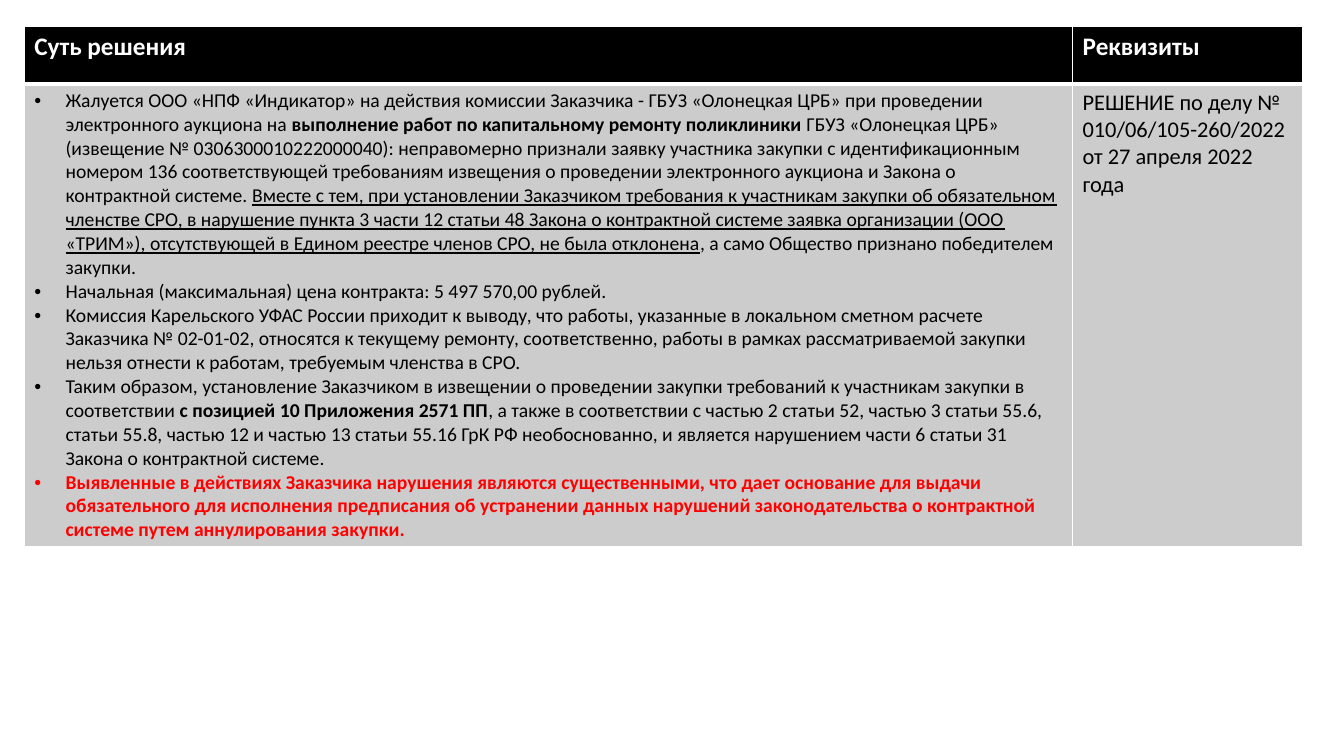
import pptx
import pptx.util
import pptx.dml.color
import pptx.oxml
import pptx.oxml.ns

FONT = "Calibri"
WHITE, BLACK, GREY, RED = "FFFFFF", "000000", "CCCCCC", "FF0000"
BODY = {"size": pptx.util.Pt(14), "bold": False, "color": BLACK}
BOLD = {**BODY, "bold": True}
UNDERLINED = {**BODY, "underline": True}
ALERT = {**BOLD, "color": RED}
HEADER = {"size": pptx.util.Pt(18), "bold": True, "color": WHITE}
DETAILS = {**BODY, "size": pptx.util.Pt(16)}

HEADINGS = ["Суть решения", "Реквизиты"]
SUMMARY = [
    [("Жалуется ООО «НПФ «Индикатор» на действия комиссии Заказчика - ГБУЗ «Олонецкая ЦРБ» "
      "при проведении электронного аукциона на ", BODY),
     ("выполнение работ по капитальному ремонту поликлиники ", BOLD),
     ("ГБУЗ «Олонецкая ЦРБ» (извещение № 0306300010222000040): неправомерно признали заявку "
      "участника закупки с идентификационным номером 136 соответствующей требованиям извещения "
      "о проведении электронного аукциона и Закона о контрактной системе. ", BODY),
     ("Вместе с тем, при установлении Заказчиком требования к участникам закупки об обязательном "
      "членстве СРО, в нарушение пункта 3 части 12 статьи 48 Закона о контрактной системе заявка "
      "организации (ООО «ТРИМ»), отсутствующей в Едином реестре членов СРО, не была отклонена",
      UNDERLINED),
     (", а само Общество признано победителем закупки.", BODY)],
    [("Начальная (максимальная) цена контракта: 5 497 570,00 рублей.", BODY)],
    [("Комиссия Карельского УФАС России приходит к выводу, что работы, указанные в локальном "
      "сметном расчете Заказчика № 02-01-02, относятся к текущему ремонту, соответственно, работы "
      "в рамках рассматриваемой закупки нельзя отнести к работам, требуемым членства в СРО.", BODY)],
    [("Таким образом, установление Заказчиком в извещении о проведении закупки требований к "
      "участникам закупки в соответствии ", BODY),
     ("с позицией 10 Приложения 2571 ПП", BOLD),
     (", а также в соответствии с частью 2 статьи 52, частью 3 статьи 55.6, статьи 55.8, частью 12 "
      "и частью 13 статьи 55.16 ГрК РФ необоснованно, и является нарушением части 6 статьи 31 "
      "Закона о контрактной системе.", BODY)],
    [("Выявленные в действиях Заказчика нарушения являются существенными, что дает основание для "
      "выдачи обязательного для исполнения предписания об устранении данных нарушений "
      "законодательства о контрактной системе путем аннулирования закупки.", ALERT)],
]
DECISION = "РЕШЕНИЕ по делу № 010/06/105-260/2022 от 27 апреля 2022 года"


def rgb(value):
    return pptx.dml.color.RGBColor.from_string(value)


def add_bullet(p):
    pPr = p._p.get_or_add_pPr()
    indent = pptx.util.Inches(0.31)
    pPr.set("marL", str(indent))
    pPr.set("indent", str(-indent))
    for tag, name, value in (("buFont", "typeface", "Arial"), ("buChar", "char", "•")):
        el = pptx.oxml.parse_xml(f'<a:{tag} {pptx.oxml.ns.nsdecls("a")} {name}="{value}"/>')
        pPr.append(el)


def set_borders(cell, widths):
    tcPr = cell._tc.get_or_add_tcPr()
    for side, width in zip("LRTB", widths):
        tcPr.append(pptx.oxml.parse_xml(
            f'<a:ln{side} {pptx.oxml.ns.nsdecls("a")} w="{pptx.util.Pt(width)}">'
            f'<a:solidFill><a:srgbClr val="{WHITE}"/></a:solidFill></a:ln{side}>'))


def fill_cell(cell, paragraphs, fill, borders, bulleted=False):
    set_borders(cell, borders)
    cell.fill.solid()
    cell.fill.fore_color.rgb = rgb(fill)
    tf = cell.text_frame
    for i, runs in enumerate(paragraphs):
        p = tf.add_paragraph() if i else tf.paragraphs[0]
        if bulleted:
            add_bullet(p)
        for text, style in runs:
            r = p.add_run()
            r.text = text
            r.font.name = FONT
            for key, value in style.items():
                if key == "color":
                    r.font.color.rgb = rgb(value)
                else:
                    setattr(r.font, key, value)


def add_decision_table(s, left, top, width, height):
    table = s.shapes.add_table(2, 2, left, top, width, height).table
    for column, share in zip(table.columns, (0.82, 0.18)):
        column.width = int(width * share)
    header_height = int(height * 0.112)
    for row, size in zip(table.rows, (header_height, height - header_height)):
        row.height = size
    for i, heading in enumerate(HEADINGS):
        fill_cell(table.cell(0, i), [[(heading, HEADER)]], BLACK, (1, 1, 1, 3))
    body_borders = (1, 1, 3, 1)
    fill_cell(table.cell(1, 0), SUMMARY, GREY, body_borders, bulleted=True)
    fill_cell(table.cell(1, 1), [[(DECISION, DETAILS)]], GREY, body_borders)


def main():
    prs = pptx.Presentation()
    prs.slide_width = pptx.util.Inches(13.33)
    prs.slide_height = pptx.util.Inches(7.5)
    s = prs.slides.add_slide(prs.slide_layouts[6])
    add_decision_table(s, *map(pptx.util.Inches, (0.24, 0.26, 12.68, 5.1)))
    prs.save("out.pptx")


if __name__ == "__main__":
    main()
